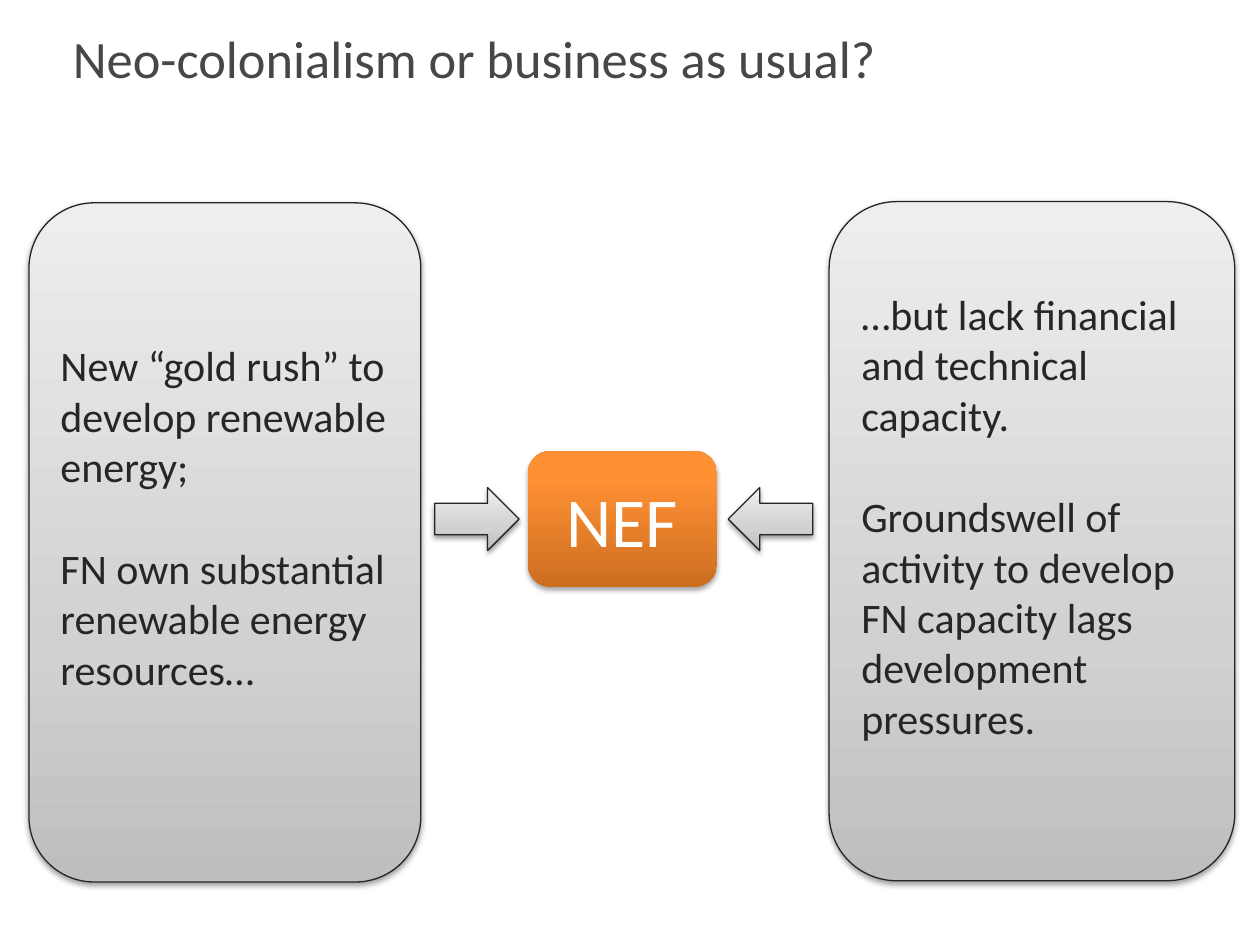
from dataclasses import dataclass

from pptx import Presentation
from pptx.dml.color import RGBColor
from pptx.enum.shapes import MSO_SHAPE as Preset
from pptx.enum.text import MSO_ANCHOR as Anchor, PP_ALIGN as Align
from pptx.oxml import parse_xml
from pptx.oxml.ns import nsdecls, qn
from pptx.util import Inches, Pt

TITLE = "Neo-colonialism or business as usual?"
CENTRE_LABEL = "NEF"
PANELS = [
    ((0.23, 1.61, 3.11, 5.39), [
        "New “gold rush” to develop renewable energy;",
        "FN own substantial renewable energy resources…",
    ]),
    ((6.58, 1.6, 3.22, 5.39), [
        "…but lack financial and technical capacity.",
        "Groundswell of activity to develop FN capacity lags development pressures.",
    ]),
]
ARROWS = [(Preset.RIGHT_ARROW, 3.45), (Preset.LEFT_ARROW, 5.78)]
TITLE_BOX = (0.48, 0.08, 9.19, 0.75)
CENTRE_BOX = (4.19, 3.58, 1.5, 1.08)
ARROW_SIZE = (0.67, 0.5)


@dataclass(frozen=True)
class Theme:
    font: str = "Calibri"
    title_size: int = 30
    body_size: int = 24
    label_size: int = 40
    title_color: str = "474747"
    body_color: str = "262626"
    label_color: str = "FFFFFF"
    outline: str = "252525"
    grey: tuple = ((0, "BEBEBE"), (35, "D1D1D1"), (100, "EEEEEE"))
    orange: tuple = ((0, "CC6E20"), (80, "FF9034"), (100, "FF9136"))
    line_height: float = 1.22


THEME = Theme()


def write(shape, texts, size, color, align=Align.LEFT, gap=0):
    frame = shape.text_frame
    frame.word_wrap = True
    frame.vertical_anchor = Anchor.MIDDLE
    frame.text = "\n".join(texts)
    for index, paragraph in enumerate(frame.paragraphs):
        paragraph.alignment = align
        if index:
            paragraph.space_before = Pt(gap)
        for run in paragraph.runs:
            run.font.name = THEME.font
            run.font.size = Pt(size)
            run.font.color.rgb = RGBColor.from_string(color)


def add_raised_shape(slide, preset, box, stops, outline=None, shadow_opacity=38, shadow_distance=1.6):
    """Add a shape with a bottom-to-top gradient and a soft shadow below it."""
    shape = slide.shapes.add_shape(preset, *map(Inches, box))
    stop_xml = "".join(
        f'<a:gs pos="{position * 1000}"><a:srgbClr val="{color}"/></a:gs>'
        for position, color in stops
    )
    properties = shape._element.spPr
    properties.find(qn("a:prstGeom")).addnext(parse_xml(
        f'<a:gradFill {nsdecls("a")} rotWithShape="1"><a:gsLst>{stop_xml}</a:gsLst>'
        '<a:lin ang="16200000" scaled="0"/></a:gradFill>'
    ))
    if outline:
        shape.line.color.rgb = RGBColor.from_string(outline)
        shape.line.width = Pt(0.75)
    else:
        shape.line.fill.background()
    shape.shadow.inherit = False
    properties.find(qn("a:effectLst")).append(parse_xml(
        f'<a:outerShdw {nsdecls("a")} blurRad="{Pt(3.1)}" dist="{Pt(shadow_distance)}" '
        'dir="5400000" rotWithShape="0"><a:srgbClr val="000000">'
        f'<a:alpha val="{shadow_opacity * 1000}"/></a:srgbClr></a:outerShdw>'
    ))
    return shape


def main():
    presentation = Presentation()
    presentation.slide_width, presentation.slide_height = Inches(10), Inches(7.5)
    slide = presentation.slides.add_slide(presentation.slide_layouts[6])

    title = slide.shapes.add_textbox(*map(Inches, TITLE_BOX))
    write(title, [TITLE], THEME.title_size, THEME.title_color)

    body_line = THEME.body_size * THEME.line_height
    for box, texts in PANELS:
        panel = add_raised_shape(slide, Preset.ROUNDED_RECTANGLE, box, THEME.grey, THEME.outline)
        write(panel, texts, THEME.body_size, THEME.body_color, gap=body_line)
        # One extra line of bottom margin lifts the text above the middle.
        panel.text_frame.margin_bottom = Inches(0.05) + Pt(body_line)

    left, top, width, height = CENTRE_BOX
    arrow_top = top + (height - ARROW_SIZE[1]) / 2
    for preset, arrow_left in ARROWS:
        add_raised_shape(slide, preset, (arrow_left, arrow_top, *ARROW_SIZE), THEME.grey, THEME.outline)

    centre = add_raised_shape(slide, Preset.ROUNDED_RECTANGLE, CENTRE_BOX, THEME.orange,
                              shadow_opacity=35, shadow_distance=1.8)
    write(centre, [CENTRE_LABEL], THEME.label_size, THEME.label_color, Align.CENTER)

    presentation.save("out.pptx")


if __name__ == "__main__":
    main()
